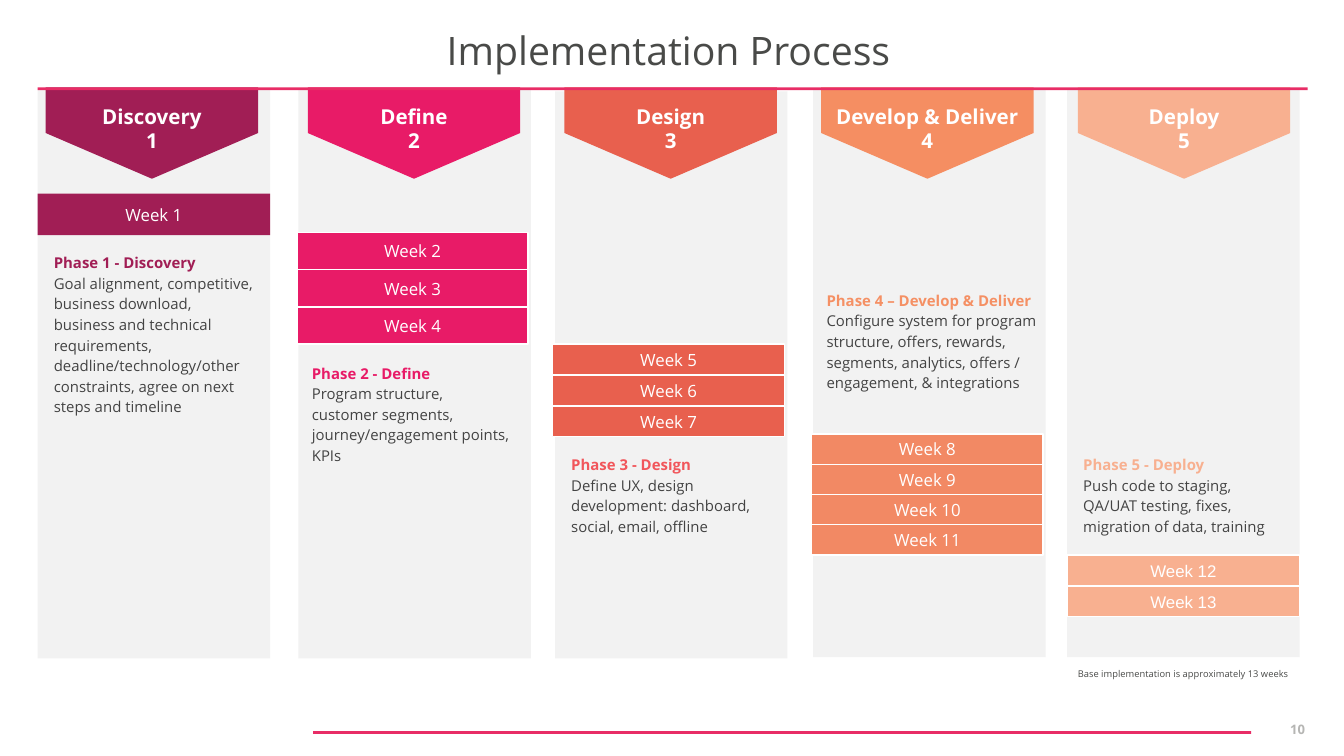
from dataclasses import dataclass

from pptx import Presentation
from pptx.dml.color import RGBColor
from pptx.enum.shapes import MSO_SHAPE
from pptx.enum.text import MSO_ANCHOR, MSO_AUTO_SIZE, PP_ALIGN
from pptx.util import Inches, Pt

RECTANGLE, PENTAGON = MSO_SHAPE.RECTANGLE, MSO_SHAPE.PENTAGON
LEFT, CENTER, RIGHT = PP_ALIGN.LEFT, PP_ALIGN.CENTER, PP_ALIGN.RIGHT
TOP, MIDDLE = MSO_ANCHOR.TOP, MSO_ANCHOR.MIDDLE
NO_AUTOFIT = MSO_AUTO_SIZE.NONE

WHITE = RGBColor(0xFF, 0xFF, 0xFF)
PANEL_GRAY = RGBColor(0xF2, 0xF2, 0xF2)
TITLE_GRAY = RGBColor(0x49, 0x4A, 0x48)
BODY_GRAY = RGBColor(0x43, 0x43, 0x43)
NUMBER_GRAY = RGBColor(0xB6, 0xB6, 0xB4)
RULE_PINK = RGBColor(0xE8, 0x2D, 0x66)
PLUM = RGBColor(0xA1, 0x1E, 0x55)
PINK = RGBColor(0xE8, 0x1B, 0x67)
RED = RGBColor(0xE8, 0x60, 0x4E)
CORAL = RGBColor(0xF1, 0x56, 0x5B)
ORANGE = RGBColor(0xF5, 0x8E, 0x62)
DEEP_ORANGE = RGBColor(0xF2, 0x89, 0x64)
LABEL_ORANGE = RGBColor(0xF5, 0x90, 0x64)
PEACH = RGBColor(0xF8, 0xB0, 0x90)

FONT = "Open Sans"
PANEL_WIDTH = 1.73
BANNER_TOP, BANNER_WIDTH, BANNER_HEIGHT = 0.65, 1.58, 0.68


@dataclass
class Phase:
    """One column; boxes are (left, top, width, height) in inches."""
    name: str
    heading: str
    description: str
    panel: tuple
    banner_left: float
    weeks: range
    weeks_box: tuple
    text_box: tuple
    banner_color: RGBColor
    weeks_color: RGBColor
    heading_color: RGBColor
    week_font: str = FONT
    week_outline: bool = True


PHASES = [
    Phase("Discovery", "Phase 1 - Discovery",
          "Goal alignment, competitive, business download, business and technical "
          "requirements, deadline/technology/other constraints, agree on next steps "
          "and timeline",
          (0.28, 0.67, PANEL_WIDTH, 4.23), 0.34, range(1, 2),
          (0.28, 1.44, 1.73, 0.31), (0.32, 1.87, 1.65, 1.68),
          PLUM, PLUM, PLUM, week_outline=False),
    Phase("Define", "Phase 2 - Define",
          "Program structure, customer segments, \njourney/engagement points, KPIs",
          (2.22, 0.66, PANEL_WIDTH, 4.24), 2.29, range(2, 5),
          (2.21, 1.73, 1.72, 0.83), (2.24, 2.69, 1.65, 1.49),
          PINK, PINK, PINK),
    Phase("Design", "Phase 3 - Design",
          "Define UX, design development: dashboard, social, email, offline",
          (4.13, 0.68, PANEL_WIDTH, 4.22), 4.2, range(5, 8),
          (4.11, 2.56, 1.73, 0.69), (4.17, 3.37, 1.65, 1.05),
          RED, RED, CORAL),
    Phase("Develop & Deliver", "Phase 4 – Develop & Deliver",
          "Configure system for program structure, offers, rewards, segments, "
          "analytics, offers / engagement, & integrations",
          (6.05, 0.67, PANEL_WIDTH, 4.22), 6.11, range(8, 12),
          (6.04, 3.23, 1.72, 0.9), (6.07, 2.15, 1.73, 0.73),
          ORANGE, DEEP_ORANGE, LABEL_ORANGE),
    Phase("Deploy", "Phase 5 - Deploy",
          "Push code to staging, QA/UAT testing, fixes, migration of data, training",
          (7.94, 0.67, PANEL_WIDTH, 4.22), 8.02, range(12, 14),
          (7.94, 4.13, 1.73, 0.46), (7.98, 3.37, 1.65, 0.89),
          PEACH, PEACH, PEACH, week_font="Arial"),
]


def set_values(target, values):
    for name, value in values.items():
        setattr(target, name, value)


def write_text(shape, lines, align=LEFT, anchor=TOP, insets=(0, 0, 0, 0), spacing=1.0):
    """Fill a shape with paragraphs given as (text, font values) pairs."""
    frame = shape.text_frame
    sides = ("margin_left", "margin_top", "margin_right", "margin_bottom")
    set_values(frame, {"word_wrap": True, "auto_size": NO_AUTOFIT,
                       "vertical_anchor": anchor,
                       **dict(zip(sides, map(Inches, insets)))})
    for index, (text, font) in enumerate(lines):
        para = frame.paragraphs[0] if index == 0 else frame.add_paragraph()
        set_values(para, {"text": text, "alignment": align, "line_spacing": spacing})
        for span in para.runs:
            set_values(span.font, {key: value for key, value in font.items()
                                   if key != "color"})
            span.font.color.rgb = font["color"]


def font_values(size, color, bold=False, name=FONT):
    return {"name": name, "size": Pt(size), "bold": bold, "color": color}


def add_block(page, box, color, kind=RECTANGLE, outline=False):
    shape = page.shapes.add_shape(kind, *map(Inches, box))
    shape.shadow.inherit = False
    shape.fill.solid()
    shape.fill.fore_color.rgb = color
    if outline:
        shape.line.color.rgb = WHITE
        shape.line.width = Pt(0.75)
    else:
        shape.line.fill.background()
    return shape


def add_label(page, box, lines, **layout):
    label = page.shapes.add_textbox(*map(Inches, box))
    write_text(label, lines, **layout)


def add_title(page, box, text):
    title = page.shapes.title
    names = ("left", "top", "width", "height")
    set_values(title, dict(zip(names, map(Inches, box))))
    write_text(title, [(text, font_values(21, TITLE_GRAY))], CENTER, MIDDLE,
               (0, 0.04, 0.07, 0.04), 0.9)


def add_weeks(page, box, phase):
    left, top, width, height = box
    row_height = height / len(phase.weeks)
    for row, week in enumerate(phase.weeks):
        bar = add_block(page, (left, top + row * row_height, width, row_height),
                        phase.weeks_color, outline=phase.week_outline)
        font = font_values(9, WHITE, name=phase.week_font)
        write_text(bar, [(f"Week {week}", font)], CENTER, MIDDLE)


def add_banner(page, box, phase, number):
    left, top, width, height = box
    # The arrow is laid out sideways, then turned to point down
    arrow = add_block(page, (left + (width - height) / 2, top + (height - width) / 2,
                             height, width), phase.banner_color, PENTAGON)
    arrow.rotation = 90
    arrow.adjustments[0] = 0.5
    add_label(page, (left, top + 0.08, width, 0.45),
              [(f"{phase.name}\n{number}", font_values(11, WHITE, True))],
              align=CENTER, insets=(0.07, 0.04, 0.07, 0.04))


def add_phase(page, phase, number):
    add_block(page, phase.panel, PANEL_GRAY)
    add_weeks(page, phase.weeks_box, phase)
    add_label(page, phase.text_box,
              [(phase.heading, font_values(8, phase.heading_color, True)),
               (phase.description, font_values(8, BODY_GRAY))],
              insets=(0.08, 0, 0.08, 0), spacing=1.15)
    add_banner(page, (phase.banner_left, BANNER_TOP, BANNER_WIDTH, BANNER_HEIGHT),
               phase, number)


def add_footer(page):
    add_block(page, (2.33, 5.44, 6.98, 0.02), RULE_PINK)
    add_label(page, (9.31, 5.28, 0.47, 0.29),
              [("10", font_values(7, NUMBER_GRAY, True))],
              align=RIGHT, anchor=MIDDLE, insets=(0.07, 0.04, 0.07, 0.04))
    add_label(page, (7.91, 4.9, 1.79, 0.21),
              [("Base implementation is approximately 13 weeks",
                font_values(5, TITLE_GRAY))],
              align=CENTER, anchor=MIDDLE, insets=(0.07, 0.07, 0.07, 0.04), spacing=0.9)


def main():
    deck = Presentation()
    # Widescreen page, 16:9
    deck.slide_width, deck.slide_height = Inches(10), Inches(10 * 9 / 16)
    page = deck.slides.add_slide(deck.slide_layouts.get_by_name("Title Only"))
    add_title(page, (0.28, 0.13, 9.46, 0.53), "Implementation Process")
    for number, phase in enumerate(PHASES, 1):
        add_phase(page, phase, number)
    # Rule under the title, above the banners
    add_block(page, (0.28, 0.65, 9.45, 0.02), RULE_PINK)
    add_footer(page)
    deck.save("out.pptx")


if __name__ == "__main__":
    main()
